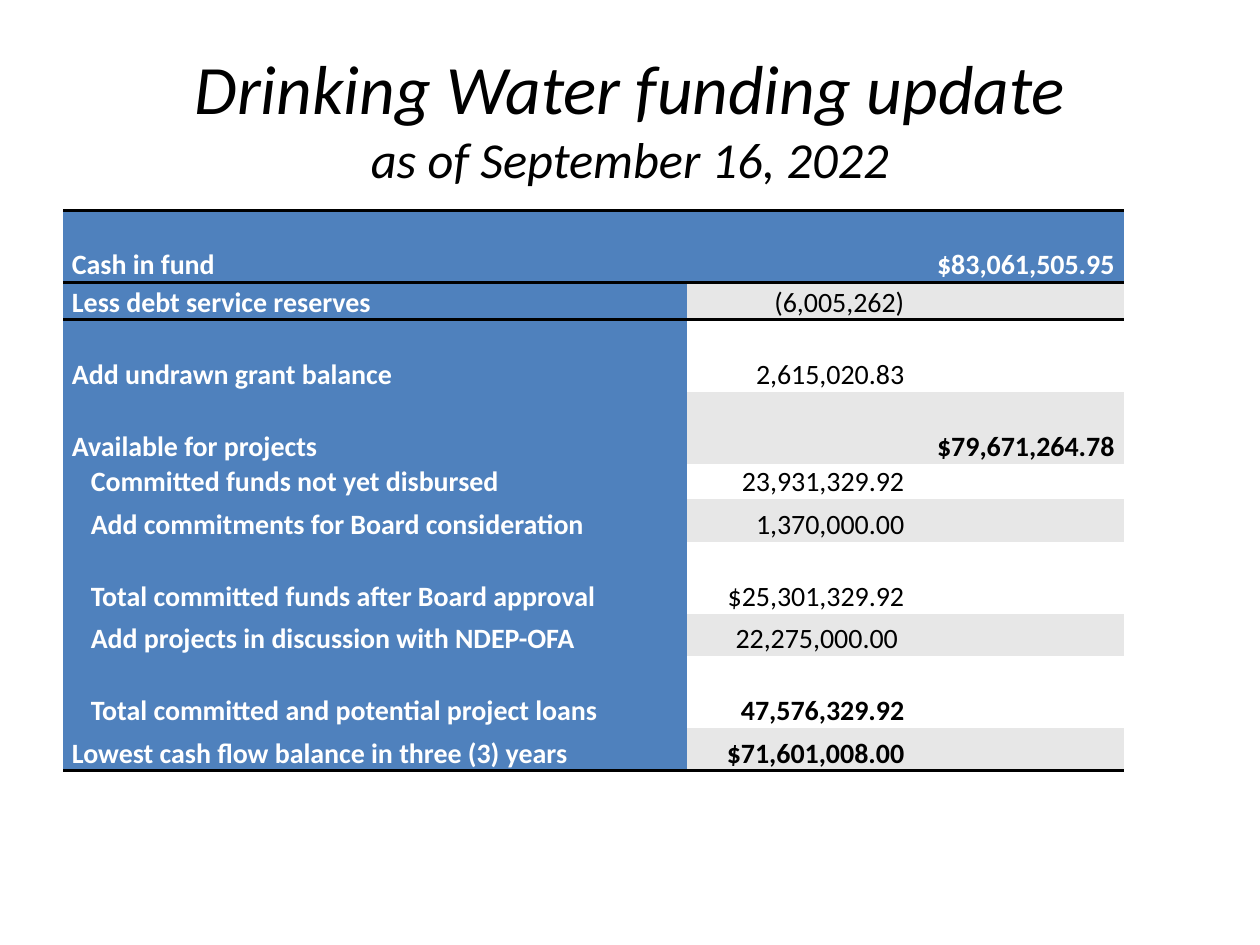
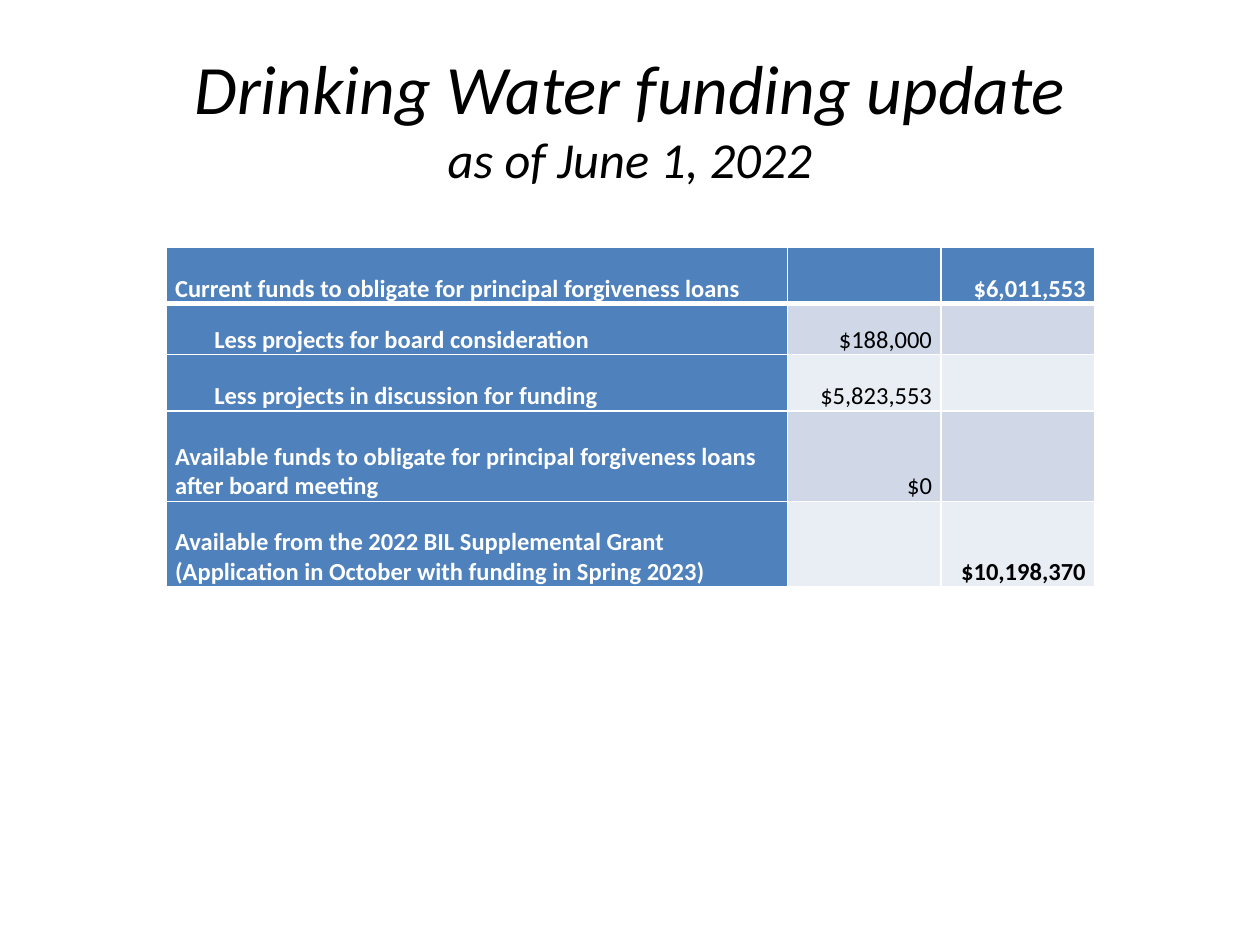
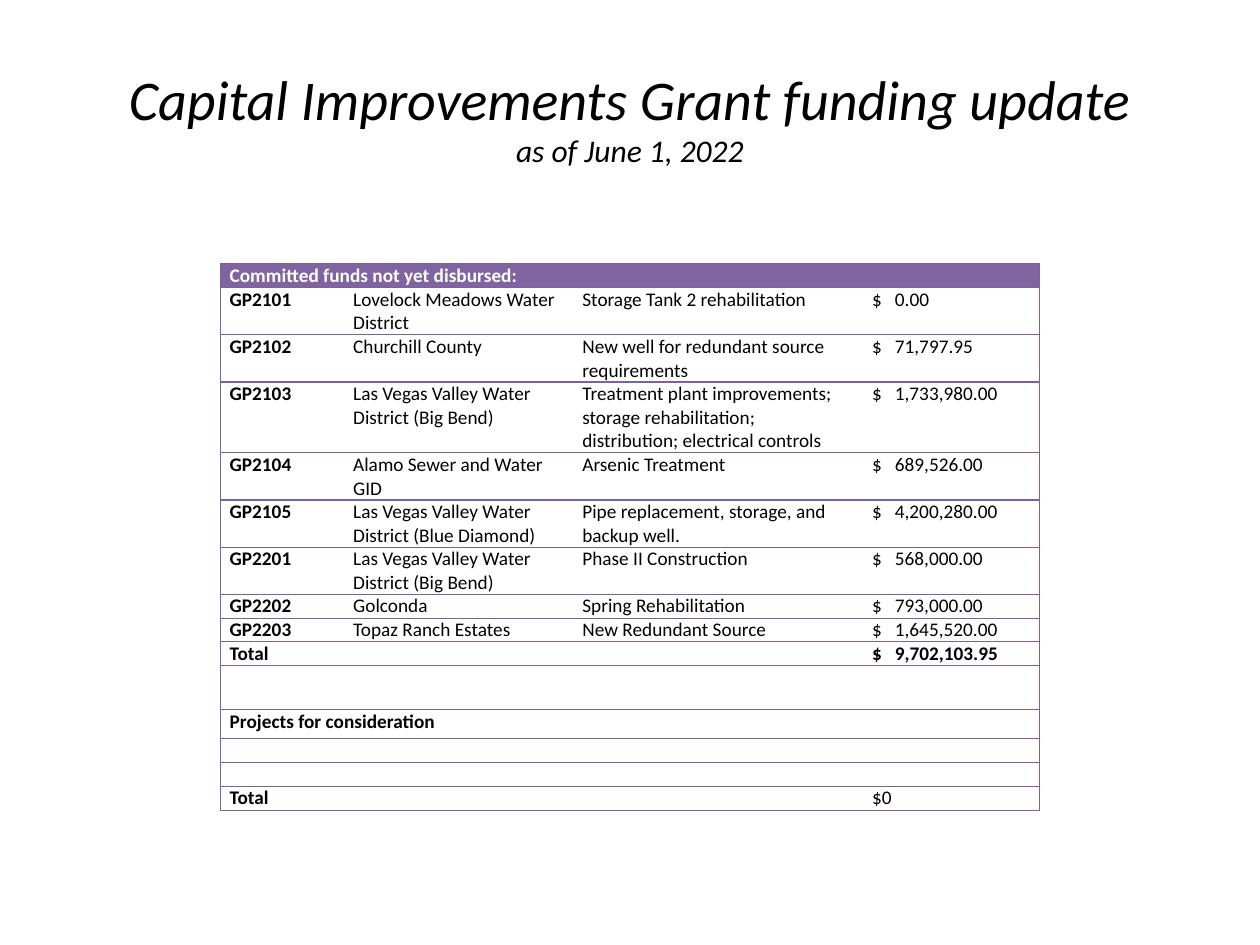
from dataclasses import dataclass

from lxml.etree import SubElement
from pptx import Presentation
from pptx.dml.color import RGBColor as Rgb
from pptx.enum.text import MSO_ANCHOR as Anchor, PP_ALIGN as Align
from pptx.oxml.ns import qn
from pptx.util import Cm, Pt


@dataclass(frozen=True)
class Theme:
    font: str = "Calibri"
    black: str = "000000"
    white: str = "FFFFFF"
    blue: str = "4F81BD"
    purple: str = "8064A2"
    purple_line: str = "7D60A0"
    grey_bands: tuple = ("FFFFFF", "E7E7E7")
    blue_bands: tuple = ("E9EDF4", "D0D8E8")
    large_title: tuple = (39.6, 28.8)
    small_title: tuple = (32, 18)
    cash_size: float = 16
    forgiveness_size: float = 14
    grant_size: float = 11
    no_style: str = "{2D5ABB26-0587-4C30-8999-92F81FD0307C}"


theme = Theme()
deck = Presentation()
deck.slide_width, deck.slide_height = Cm(25.4), Cm(19.05)


def start_slide(heading, date, sizes, left, top, widths, heights):
    slide = deck.slides.add_slide(deck.slide_layouts[6])
    title = slide.shapes.add_textbox(Cm(1.27), Cm(0.76), Cm(22.86), Cm(3.18)).text_frame
    title.word_wrap = True
    title.vertical_anchor = Anchor.MIDDLE
    line = title.paragraphs[0]
    line.alignment = Align.CENTER
    for part, size in zip((heading, date), sizes):
        if part == date:
            line.add_line_break()
        run = line.add_run()
        run.text = part
        run.font.name, run.font.size, run.font.italic = theme.font, Pt(size), True
        run.font.color.rgb = Rgb.from_string(theme.black)

    table = slide.shapes.add_table(
        len(heights), len(widths), Cm(left), Cm(top), Cm(sum(widths)), Cm(sum(heights))
    ).table
    table.first_row = table.horz_banding = False
    table._tbl.tblPr.find(qn("a:tableStyleId")).text = theme.no_style
    for column, width in zip(table.columns, widths):
        column.width = Cm(width)
    for row, height in zip(table.rows, heights):
        row.height = Cm(height)
    return table


def write_cell(cell, text, size, color=theme.black, bold=False, fill=None, edges=(),
               align=Align.LEFT, anchor=Anchor.BOTTOM, indent=0, tab=0):
    cell.margin_left = cell.margin_right = Cm(0.18)
    cell.margin_top = cell.margin_bottom = 0
    cell.vertical_anchor = anchor
    for side, edge_color, width in edges:
        edge = SubElement(cell._tc.tcPr, qn(f"a:ln{side}"), w=str(Pt(width)))
        SubElement(SubElement(edge, qn("a:solidFill")), qn("a:srgbClr"), val=edge_color)
    if fill:
        cell.fill.solid()
        cell.fill.fore_color.rgb = Rgb.from_string(fill)
    else:
        cell.fill.background()
    for index, words in enumerate(text.split("\n")):
        line = cell.text_frame.add_paragraph() if index else cell.text_frame.paragraphs[0]
        line.alignment = align
        if indent:
            line._p.get_or_add_pPr().set("marL", str(Cm(indent)))
        if tab:
            tabs = SubElement(line._p.get_or_add_pPr(), qn("a:tabLst"))
            SubElement(tabs, qn("a:tab"), pos=str(Cm(tab)), algn="l")
        if words:
            run = line.add_run()
            run.text = words
            run.font.name, run.font.size, run.font.bold = theme.font, Pt(size), bold
            run.font.color.rgb = Rgb.from_string(color)
        else:
            SubElement(line._p, qn("a:endParaRPr"), sz=str(size * 100))


cash_rows = [
    (1.45, 0, "Cash in fund", "", "$83,061,505.95"),
    (0.76, 0, "Less debt service reserves", "(6,005,262)", ""),
    (1.45, 0, "Add undrawn grant balance", "2,615,020.83", ""),
    (1.45, 0, "Available for projects", "", "$79,671,264.78"),
    (0.71, 0.38, "Committed funds not yet disbursed", "23,931,329.92", ""),
    (0.86, 0.38, "Add commitments for Board consideration", "1,370,000.00", ""),
    (1.45, 0.38, "Total committed funds after Board approval", "$25,301,329.92", ""),
    (0.86, 0.38, "Add projects in discussion with NDEP-OFA", "22,275,000.00 ", ""),
    (1.45, 0.38, "Total committed and potential project loans", "47,576,329.92", ""),
    (0.86, 0, "Lowest cash flow balance in three (3) years", "$71,601,008.00", ""),
]
forgiveness_rows = [
    (1.14, 0, "Current funds to obligate for principal forgiveness loans", "", "$6,011,553"),
    (1.03, 0.79, "Less projects for board consideration", "$188,000", ""),
    (1.14, 0.79, "Less projects in discussion for funding", "$5,823,553", ""),
    (1.82, 0, "Available funds to obligate for principal forgiveness loans after board meeting",
     "$0", ""),
    (1.73, 0, "Available from the 2022 BIL Supplemental Grant\n"
     "(Application in October with funding in Spring 2023)", "", "$10,198,370"),
]

cash = start_slide("Drinking Water funding update", "as of September 16, 2022", theme.large_title,
                   1.27, 4.24, (12.57, 4.57, 4.24), [row[0] for row in cash_rows])
forgiveness = start_slide("Drinking Water funding update", "as of June 1, 2022", theme.large_title,
                          3.35, 4.98, (12.52, 3.1, 3.1), [row[0] for row in forgiveness_rows])

cash_edges = {
    0: [("T", theme.black, 2), ("B", theme.black, 2)],
    1: [("T", theme.black, 2)],
    len(cash_rows) - 1: [("B", theme.black, 2)],
}
white_sides = [("L", theme.white, 1), ("R", theme.white, 1)]
forgiveness_edges = {
    r: white_sides + [("T", theme.white, 3 if r == 1 else 1), ("B", theme.white, 1 if r else 3)]
    for r in range(len(forgiveness_rows))
}

for table, rows, size, bands, edges, bold_from in (
    (cash, cash_rows, theme.cash_size, theme.grey_bands, cash_edges, 8),
    (forgiveness, forgiveness_rows, theme.forgiveness_size, theme.blue_bands,
     forgiveness_edges, len(forgiveness_rows)),
):
    for r, (height, indent, *entries) in enumerate(rows):
        for c, entry in enumerate(entries):
            on_blue = r == 0 or c == 0
            write_cell(
                table.cell(r, c), entry, size,
                color=theme.white if on_blue else theme.black,
                bold=on_blue or c == 2 or r >= bold_from,
                fill=theme.blue if on_blue else bands[r % 2],
                edges=edges.get(r, ()),
                align=Align.RIGHT if c else Align.LEFT,
                indent=0 if c else indent,
            )

grant_rows = [
    (0.48, 4, "Committed funds not yet disbursed:", "", "", ""),
    (0.95, 1, "GP2101", "Lovelock Meadows Water District", "Storage Tank 2 rehabilitation",
     "$\t0.00"),
    (0.95, 1, "GP2102", "Churchill County", "New well for redundant source requirements",
     "$\t71,797.95"),
    (1.43, 1, "GP2103", "Las Vegas Valley Water District (Big Bend)",
     "Treatment plant improvements; storage rehabilitation; distribution; electrical controls",
     "$\t1,733,980.00"),
    (0.95, 1, "GP2104", "Alamo Sewer and Water GID", "Arsenic Treatment", "$\t689,526.00"),
    (0.95, 1, "GP2105", "Las Vegas Valley Water District (Blue Diamond)",
     "Pipe replacement, storage, and backup well.", "$\t4,200,280.00"),
    (0.95, 1, "GP2201", "Las Vegas Valley Water District (Big Bend)", "Phase II Construction",
     "$\t568,000.00"),
    (0.48, 1, "GP2202", "Golconda", "Spring Rehabilitation", "$\t793,000.00"),
    (0.48, 1, "GP2203", "Topaz Ranch Estates", "New Redundant Source", "$\t1,645,520.00"),
    (0.48, 3, "Total", "", "", "$\t9,702,103.95"),
    (0.89, 4, "", "", "", ""),
    (0.58, 4, "Projects for consideration", "", "", ""),
    (0.48, 1, "", "", "", ""),
    (0.48, 1, "", "", "", ""),
    (0.48, 3, "Total", "", "", "$0"),
]
grants = start_slide("Capital Improvements Grant funding update", "as of June 1, 2022",
                     theme.small_title, 4.45, 5.32, (2.49, 4.62, 5.84, 3.56),
                     [row[0] for row in grant_rows])
committed_total = 9

for r, (height, span, *entries) in enumerate(grant_rows):
    if span > 1:
        grants.cell(r, 0).merge(grants.cell(r, span - 1))
    for c, entry in enumerate(entries):
        sides = ("L" if c == 0 else "") + ("R" if c == 3 or c + span == 4 else "") + "TB"
        write_cell(
            grants.cell(r, c), entry, theme.grant_size,
            color=theme.black if r else theme.white,
            bold=c == 0 or r == committed_total,
            fill=None if r else theme.purple,
            edges=[(side, theme.purple_line, 0.75) for side in sides],
            anchor=Anchor.TOP,
            tab=0.46 if "\t" in entry else 0,
        )

deck.save("out.pptx")
